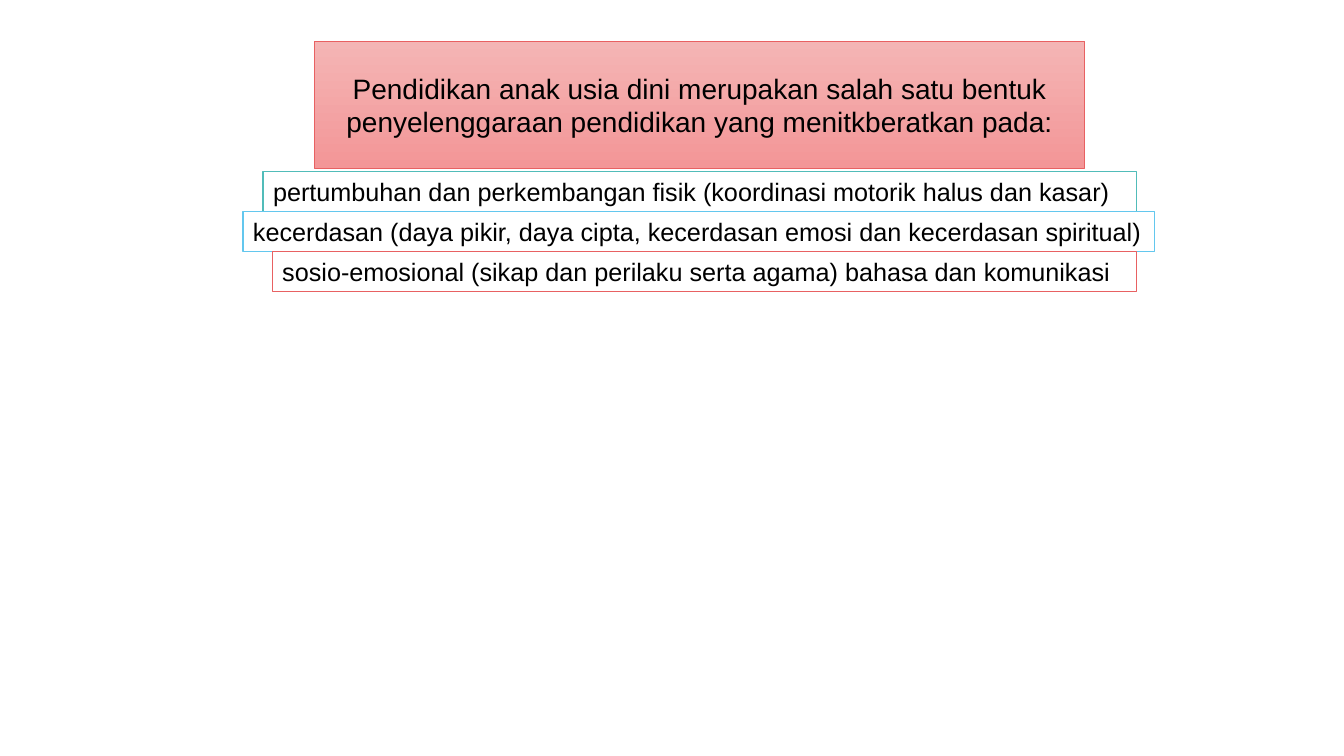
from typing import NamedTuple

from pptx import Presentation
from pptx.dml.color import RGBColor
from pptx.enum.shapes import MSO_SHAPE
from pptx.enum.text import MSO_ANCHOR, MSO_AUTO_SIZE, PP_ALIGN
from pptx.util import Inches, Pt

RECTANGLE = MSO_SHAPE.RECTANGLE
TOP, MIDDLE = MSO_ANCHOR.TOP, MSO_ANCHOR.MIDDLE
LEFT, CENTER = PP_ALIGN.LEFT, PP_ALIGN.CENTER
GROW = MSO_AUTO_SIZE.SHAPE_TO_FIT_TEXT

SLIDE_WIDTH, SLIDE_HEIGHT = Inches(13.33), Inches(7.5)
FONT = "Arial"
RED = "E86162"
HEADING_GRADIENT = ("F4B5B5", "F39697")

# Lengths are percentages of the slide's width or height.
FOCUS_TOP, FOCUS_STEP, FOCUS_HEIGHT = 22.67, 5.3, 5.33


class Focus(NamedTuple):
    left: float
    width: float
    border: str
    text: str


FOCUSES = [
    Focus(19.58, 64.97, "51BCB9",
          "pertumbuhan dan perkembangan fisik (koordinasi motorik halus dan kasar)"),
    Focus(18.08, 67.82, "63C7EE",
          "kecerdasan (daya pikir, daya cipta, kecerdasan emosi dan kecerdasan spiritual)"),
    Focus(20.26, 64.29, RED,
          "sosio-emosional (sikap dan perilaku serta agama) bahasa dan komunikasi"),
]


def color(value: str) -> RGBColor:
    return RGBColor.from_string(value)


def across(percent: float) -> int:
    return round(SLIDE_WIDTH * percent / 100)


def down(percent: float) -> int:
    return round(SLIDE_HEIGHT * percent / 100)


def add_box(page, left: float, top: float, width: float, height: float,
            border: str, border_width: float, text: str, size: int,
            align=LEFT, anchor=TOP):
    """Add a bordered rectangle with one paragraph; the caller sets its fill."""
    box = page.shapes.add_shape(
        RECTANGLE, across(left), down(top), across(width), down(height))
    box.shadow.inherit = False
    box.line.color.rgb = color(border)
    box.line.width = Pt(border_width)
    frame = box.text_frame
    frame.word_wrap = True
    frame.vertical_anchor = anchor
    para = frame.paragraphs[0]
    para.text = text
    para.alignment = align
    para.font.name = FONT
    para.font.size = Pt(size)
    para.font.color.rgb = color("000000")
    return box


def add_heading(page) -> None:
    box = add_box(
        page, 23.41, 5.47, 57.31, 16.8, RED, 0.5,
        "Pendidikan anak usia dini merupakan salah satu bentuk "
        "penyelenggaraan pendidikan yang menitkberatkan pada:",
        20, CENTER, MIDDLE)
    box.fill.gradient()
    box.fill.gradient_angle = 270
    for stop, value in zip(box.fill.gradient_stops, HEADING_GRADIENT):
        stop.color.rgb = color(value)


def add_focuses(page) -> None:
    for row, focus in enumerate(FOCUSES):
        box = add_box(
            page, focus.left, FOCUS_TOP + row * FOCUS_STEP, focus.width,
            FOCUS_HEIGHT, focus.border, 1, focus.text, 18)
        box.fill.solid()
        box.fill.fore_color.rgb = color("FFFFFF")
        box.text_frame.auto_size = GROW


def main() -> None:
    deck = Presentation()
    deck.slide_width, deck.slide_height = SLIDE_WIDTH, SLIDE_HEIGHT
    page = deck.slides.add_slide(deck.slide_layouts[6])
    add_heading(page)
    add_focuses(page)
    deck.save("out.pptx")


if __name__ == "__main__":
    main()
